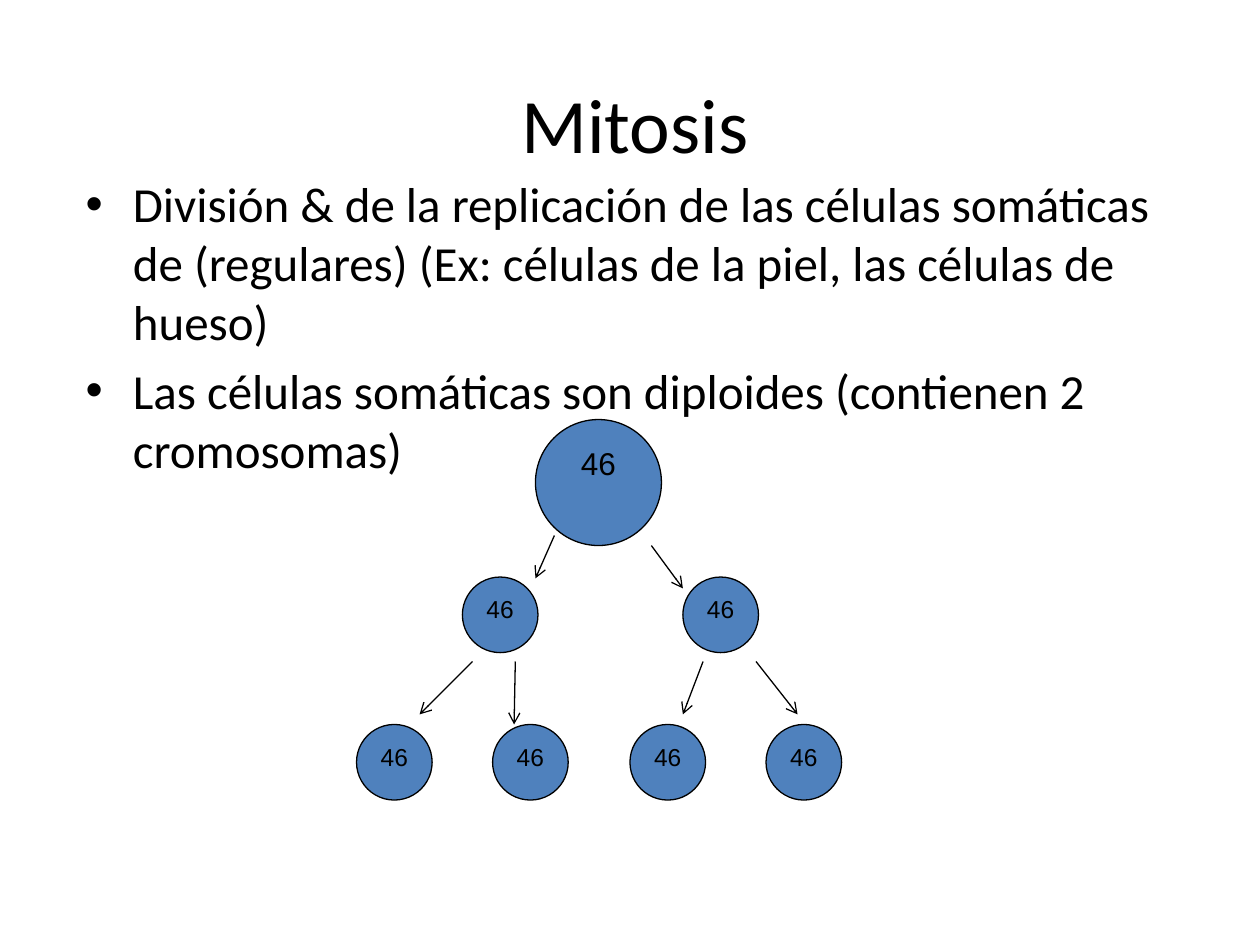
from lxml import etree
from pptx import Presentation
from pptx import util as u
from pptx.dml import color
from pptx.enum import shapes, text
from pptx.oxml import ns

PX = 9144  # EMU per px, 100 px to the inch
COLORS = {"ink": "000000", "cell": "4F81BD", "paper": "FFFFFF"}


def rgb(name):
    return color.RGBColor.from_string(COLORS[name])


class MitosisSlide:
    """Holds the style and the current slide."""

    heading = {"name": "Calibri", "size": u.Pt(44)}
    bullets = {"name": "Calibri", "size": u.Pt(28)}
    outline = u.Pt(0.75)

    def __init__(self, deck):
        self.slide = deck.slides.add_slide(deck.slide_layouts[1])
        fill = self.slide.background.fill
        fill.solid()
        fill.fore_color.rgb = rgb("paper")

    def format_run(self, run, style):
        for key, value in style.items():
            setattr(run.font, key, value)
        run.font.color.rgb = rgb("ink")

    def placeholder(self, index, box, lines, style, anchor):
        holder = self.slide.placeholders[index]
        for side, value in zip(("left", "top", "width", "height"), box):
            setattr(holder, side, value * PX)
        frame = holder.text_frame
        frame.text = "\n".join(lines)
        frame.auto_size = text.MSO_AUTO_SIZE.NONE
        frame.vertical_anchor = anchor
        for paragraph in frame.paragraphs:
            self.format_run(paragraph.runs[0], style)

    def cell(self, left, top, size, points):
        circle = self.slide.shapes.add_shape(
            shapes.MSO_SHAPE.FLOWCHART_CONNECTOR,
            left * PX, top * PX, size * PX, size * PX)
        circle.shadow.inherit = False
        circle.fill.solid()
        circle.fill.fore_color.rgb = rgb("cell")
        circle.line.color.rgb = rgb("ink")
        circle.line.width = self.outline
        frame = circle.text_frame
        frame.text = "46"
        frame.word_wrap = False
        frame.vertical_anchor = text.MSO_ANCHOR.TOP
        paragraph = frame.paragraphs[0]
        paragraph.alignment = text.PP_ALIGN.CENTER
        self.format_run(paragraph.runs[0], {"name": "Arial", "size": u.Pt(points)})

    def arrow(self, *ends):
        division = self.slide.shapes.add_connector(
            shapes.MSO_CONNECTOR.STRAIGHT, *(end * PX for end in ends))
        division.line.color.rgb = rgb("ink")
        division.line.width = self.outline
        etree.SubElement(division.line._get_or_add_ln(), ns.qn("a:tailEnd"), type="arrow")
        etree.SubElement(division._element.spPr, ns.qn("a:effectLst"))


def main():
    deck = Presentation()
    deck.slide_width, deck.slide_height = 1000 * PX, 750 * PX
    mitosis = MitosisSlide(deck)

    # Title and definition
    mitosis.placeholder(0, (58, 52, 892, 90), ["Mitosis"],
                        mitosis.heading, text.MSO_ANCHOR.MIDDLE)
    mitosis.placeholder(1, (58, 133, 892, 592), [
        "División & de la replicación de las células somáticas de (regulares) "
        "(Ex: células de la piel, las células de hueso)",
        "Las células somáticas son diploides (contienen 2 cromosomas)",
    ], mitosis.bullets, text.MSO_ANCHOR.TOP)

    # Three generations of cells: top, size, text points, lefts
    generations = [
        (333, 100, 18, [425]),
        (458, 60, 14, [367, 542]),
        (575, 60, 14, [round(283 + 325 * i / 3) for i in range(4)]),
    ]
    for top, size, points, lefts in generations:
        for left in lefts:
            mitosis.cell(left, top, size, points)

    # Divisions from parent to daughter cells
    for ends in [
        (440, 425, 425, 459), (517, 433, 542, 467),
        (375, 525, 333, 567), (409, 525, 408, 575),
        (558, 525, 542, 567), (600, 525, 633, 567),
    ]:
        mitosis.arrow(*ends)

    deck.save("out.pptx")


if __name__ == "__main__":
    main()
